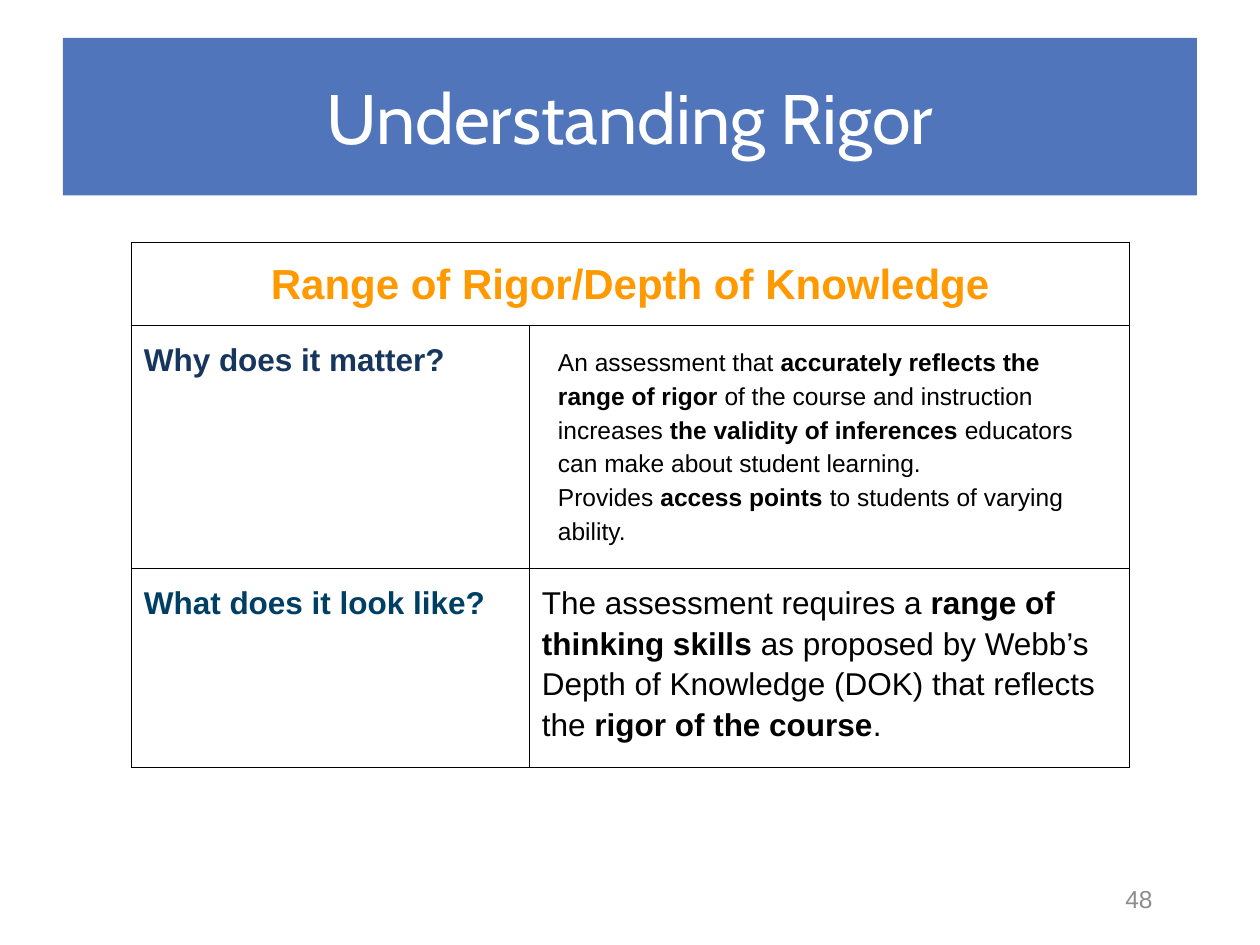
from typing import NamedTuple

from lxml import etree
from pptx import Presentation
from pptx.dml.color import RGBColor
from pptx.enum import shapes, text
from pptx.oxml import ns
from pptx.util import Pt

BLACK = "000000"
CENTER = text.PP_ALIGN.CENTER
MIDDLE = text.MSO_ANCHOR.MIDDLE


class Run(NamedTuple):
    text: str
    bold: bool = False


class Entry(NamedTuple):
    row: int
    column: int
    runs: list[Run]
    color: str = BLACK
    size: float = 18
    align: text.PP_ALIGN = text.PP_ALIGN.LEFT


COLUMN_WIDTHS = [227.5, 342.75]
ROW_HEIGHTS = [45.2, 138.7, 106.8]
ENTRIES = [
    Entry(0, 0, [Run("Range of Rigor/Depth of Knowledge", True)], "FF9900", 24, CENTER),
    Entry(1, 0, [Run("Why does it matter?", True)], "17365D"),
    Entry(2, 0, [Run("What does it look like?", True)], "003F64"),
    Entry(2, 1, [
        Run("The assessment requires a"),
        Run(" range of thinking skills ", True),
        Run("as proposed by Webb’s Depth of Knowledge (DOK) that reflects the "),
        Run("rigor of the course", True),
        Run("."),
    ]),
]
REASONS = [
    [
        Run("An assessment that "),
        Run("accurately reflects the range of rigor ", True),
        Run("of the course and instruction increases "),
        Run("the validity of inferences ", True),
        Run("educators can make about student learning."),
    ],
    [
        Run("Provides "),
        Run("access points ", True),
        Run("to students of varying ability."),
    ],
]


def rgb(code: str) -> RGBColor:
    return RGBColor.from_string(code)


def write(frame, paragraphs: list[list[Run]], *, size: float, color: str = BLACK,
          font: str = "Arial", align=text.PP_ALIGN.LEFT, spacing: float = 1.0) -> None:
    for index, runs in enumerate(paragraphs):
        paragraph = frame.add_paragraph() if index else frame.paragraphs[0]
        paragraph.alignment = align
        paragraph.line_spacing = spacing
        for part in runs:
            run = paragraph.add_run()
            run.text = part.text
            run.font.name = font
            run.font.size = Pt(size)
            run.font.bold = part.bold
            run.font.color.rgb = rgb(color)


def set_margins(target, margin: float) -> None:
    for side in ("left", "right", "top", "bottom"):
        setattr(target, f"margin_{side}", Pt(margin))


def add_borders(cell) -> None:
    """Draw a thin black line on all four sides of a cell."""
    properties = cell._tc.get_or_add_tcPr()
    for index, side in enumerate(("lnL", "lnR", "lnT", "lnB")):
        line = etree.Element(ns.qn(f"a:{side}"), w=str(Pt(0.75)))
        fill = etree.SubElement(line, ns.qn("a:solidFill"))
        etree.SubElement(fill, ns.qn("a:srgbClr"), val=BLACK)
        properties.insert(index, line)


def add_banner(slide) -> None:
    banner = slide.shapes.add_shape(
        shapes.MSO_SHAPE.RECTANGLE, Pt(36), Pt(21.6), Pt(648), Pt(90))
    banner.shadow.inherit = False
    banner.fill.solid()
    banner.fill.fore_color.rgb = rgb("5075BB")
    banner.line.fill.background()
    frame = banner.text_frame
    set_margins(frame, 7.2)
    frame.vertical_anchor = MIDDLE
    write(frame, [[Run("Understanding Rigor")]], size=40, color="FFFFFF",
          font="Cabin", align=CENTER)


def add_rigor_table(slide) -> None:
    table = slide.shapes.add_table(
        len(ROW_HEIGHTS), len(COLUMN_WIDTHS), Pt(75), Pt(138.4),
        Pt(sum(COLUMN_WIDTHS)), Pt(sum(ROW_HEIGHTS))).table
    table.first_row = table.horz_banding = False
    for column, width in zip(table.columns, COLUMN_WIDTHS):
        column.width = Pt(width)
    for row, height in zip(table.rows, ROW_HEIGHTS):
        row.height = Pt(height)
    table.cell(0, 0).merge(table.cell(0, 1))
    for cell in table.iter_cells():
        set_margins(cell, 7.2)
        cell.fill.background()
        add_borders(cell)
    for entry in ENTRIES:
        write(table.cell(entry.row, entry.column).text_frame, [entry.runs],
              size=entry.size, color=entry.color, align=entry.align, spacing=1.15)


def add_text_box(slide, left: float, top: float, width: float, height: float):
    frame = slide.shapes.add_textbox(Pt(left), Pt(top), Pt(width), Pt(height)).text_frame
    frame.word_wrap = True
    return frame


def main() -> None:
    deck = Presentation()
    deck.slide_width, deck.slide_height = Pt(720), Pt(540)
    slide = deck.slides.add_slide(deck.slide_layouts[6])

    page_number = add_text_box(slide, 612, 499, 77.75, 28.8)
    page_number.vertical_anchor = MIDDLE
    write(page_number, [[Run("48")]], size=14, color="8C8C8C", align=CENTER)

    add_banner(slide)
    add_rigor_table(slide)

    reasons = add_text_box(slide, 311.75, 192.25, 329.75, 122.4)
    reasons.auto_size = text.MSO_AUTO_SIZE.SHAPE_TO_FIT_TEXT
    write(reasons, REASONS, size=14, spacing=1.15)

    deck.save("out.pptx")


if __name__ == "__main__":
    main()
